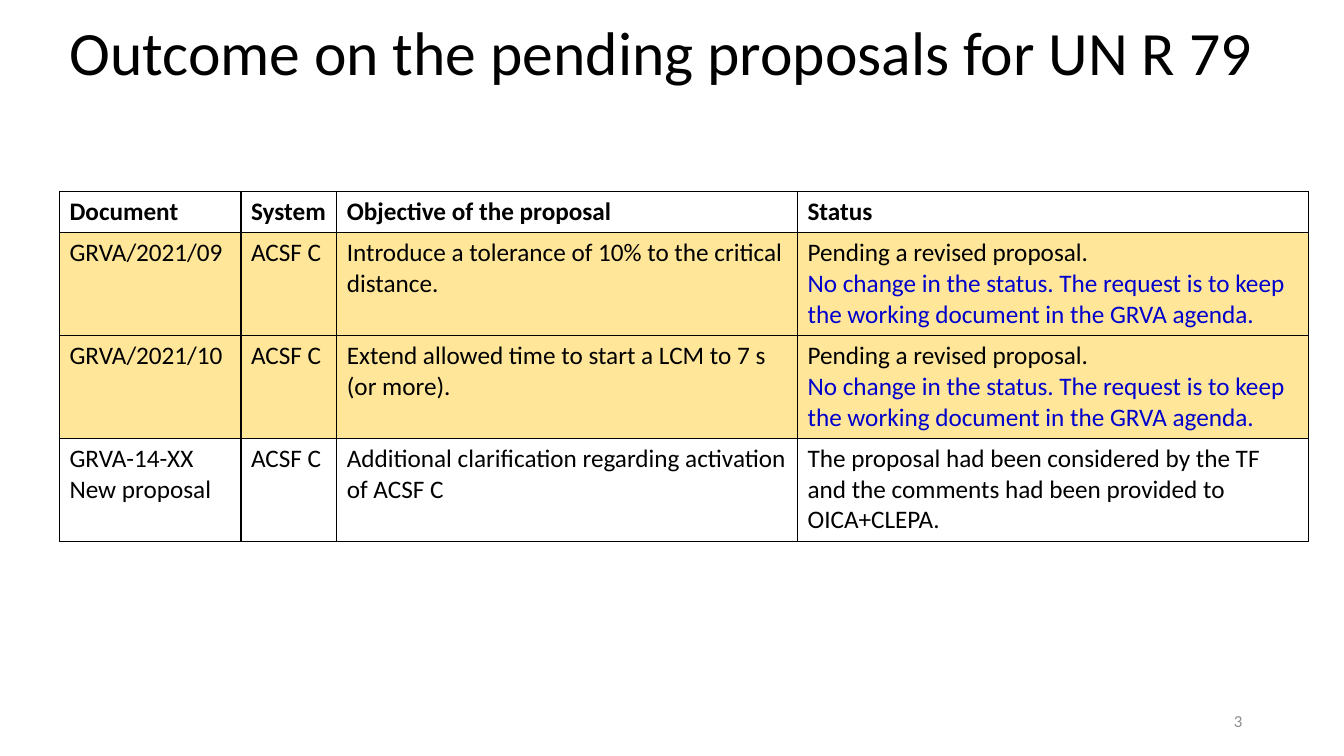
from lxml.etree import SubElement
from pptx import Presentation
from pptx.dml.color import RGBColor
from pptx.enum.text import MSO_ANCHOR, PP_ALIGN
from pptx.oxml.ns import qn
from pptx.util import Inches, Pt

BLACK = RGBColor(0x00, 0x00, 0x00)
WHITE = RGBColor(0xFF, 0xFF, 0xFF)
GRAY = RGBColor(0x8C, 0x8C, 0x8C)
BLUE = RGBColor(0x00, 0x00, 0xCC)
AMBER = RGBColor(0xFF, 0xE6, 0x99)

FONT = "Calibri"
LEFT = 0.59
COLUMN_WIDTHS = (1.8, 0.95, 4.57, 5.07)
HEADER_HEIGHT = 0.41
ROW_HEIGHT = 1.02

HEADERS = ("Document", "System", "Objective of the proposal", "Status")
PENDING = (
    "Pending a revised proposal.",
    "No change in the status. The request is to keep the working document in the GRVA agenda.",
)
# Each cell is a tuple of paragraphs; a line feed is a break within one.
PROPOSALS = (
    (("GRVA/2021/09",), ("ACSF C",),
     ("Introduce a tolerance of 10% to the critical distance.",), PENDING),
    (("GRVA/2021/10",), ("ACSF C",),
     ("Extend allowed time to start a LCM to 7 s \n(or more).",), PENDING),
    (("GRVA-14-XX", "New proposal"), ("ACSF C",),
     ("Additional clarification regarding activation of ACSF C",),
     ("The proposal had been considered by the TF and the comments had been provided to OICA+CLEPA.",)),
)


def add_text(paragraph, text, size, color=BLACK, bold=False):
    for index, line in enumerate(text.split("\n")):
        if index:
            paragraph.add_line_break()
        run = paragraph.add_run()
        run.text = line
        run.font.name = FONT
        run.font.size = Pt(size)
        run.font.bold = bold
        run.font.color.rgb = color


def add_label(slide, box, text, size, color=BLACK, align=PP_ALIGN.LEFT, spacing=1.0):
    shape = slide.shapes.add_textbox(*(Inches(length) for length in box))
    frame = shape.text_frame
    frame.word_wrap = True
    frame.vertical_anchor = MSO_ANCHOR.MIDDLE
    paragraph = frame.paragraphs[0]
    paragraph.alignment = align
    paragraph.line_spacing = spacing
    add_text(paragraph, text, size, color)


def set_borders(cell):
    """Draw a thin black line on all four sides, ahead of the fill in the XML."""
    properties = cell._tc.get_or_add_tcPr()
    for index, side in enumerate(("lnL", "lnR", "lnT", "lnB")):
        line = SubElement(properties, qn(f"a:{side}"), w=str(Pt(1)))
        fill = SubElement(line, qn("a:solidFill"))
        SubElement(fill, qn("a:srgbClr"), val=str(BLACK))
        properties.insert(index, line)


def fill_cell(cell, paragraphs, background, bold=False):
    cell.fill.solid()
    cell.fill.fore_color.rgb = background
    set_borders(cell)
    frame = cell.text_frame
    for index, text in enumerate(paragraphs):
        paragraph = frame.add_paragraph() if index else frame.paragraphs[0]
        is_update = paragraphs is PENDING and index == 1
        add_text(paragraph, text, 18, BLUE if is_update else BLACK, bold)


def add_proposal_table(slide, top):
    height = HEADER_HEIGHT + ROW_HEIGHT * len(PROPOSALS)
    table = slide.shapes.add_table(
        len(PROPOSALS) + 1, len(HEADERS),
        Inches(LEFT), Inches(top), Inches(sum(COLUMN_WIDTHS)), Inches(height),
    ).table
    table.horz_banding = False
    for column, width in zip(table.columns, COLUMN_WIDTHS):
        column.width = Inches(width)
    for index, row in enumerate(table.rows):
        row.height = Inches(ROW_HEIGHT if index else HEADER_HEIGHT)
    for cell, header in zip(table.rows[0].cells, HEADERS):
        fill_cell(cell, (header,), WHITE, bold=True)
    for index, proposal in enumerate(PROPOSALS, start=1):
        background = AMBER if PENDING in proposal else WHITE
        for cell, paragraphs in zip(table.rows[index].cells, proposal):
            fill_cell(cell, paragraphs, background)


def main():
    presentation = Presentation()
    presentation.slide_width = Inches(13.33)
    presentation.slide_height = Inches(7.5)
    slide = presentation.slides.add_slide(presentation.slide_layouts[6])
    add_label(slide, (LEFT, 0.16, 12.09, 0.79),
              "Outcome on the pending proposals for UN R 79", 44, spacing=0.9)
    add_proposal_table(slide, 1.9)
    add_label(slide, (9.42, 6.95, 3, 0.4), "3", 12, GRAY, PP_ALIGN.RIGHT)
    presentation.save("out.pptx")


if __name__ == "__main__":
    main()
